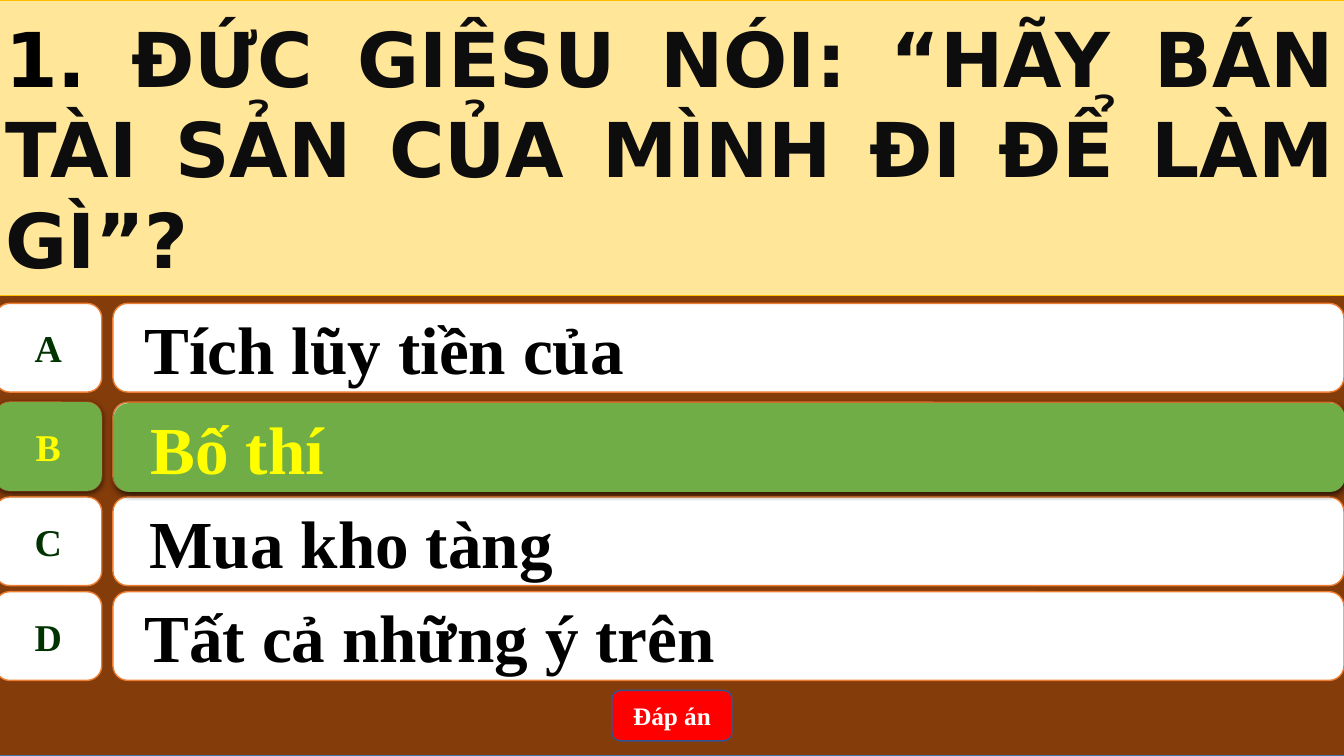
from lxml import etree
from pptx import Presentation
from pptx import util as u
from pptx.dml.color import RGBColor
from pptx.enum import shapes, text

# Content
QUESTION = ("1. ", "ĐỨC GIÊSU NÓI: “HÃY BÁN TÀI SẢN CỦA MÌNH ĐI ĐỂ LÀM GÌ”?")
ANSWERS = [  # letter, answer, row top, text indent
    ("A", "Tích lũy tiền của", 3.01, 0.27),
    ("B", "Bố thí", 3.99, 0.32),
    ("C", "Mua kho tàng", 4.93, 0.32),
    ("D", "Tất cả những ý trên", 5.87, 0.27),
]
CORRECT = 1
BUTTON = "Đáp án"

# Style and grid
COLORS = {
    "brown": "843C0B", "steel": "43739E", "cream": "FFE699", "gold": "FFC000",
    "white": "FFFFFF", "orange": "ED7D31", "forest": "003300", "black": "000000",
    "ink": "0D0D0D", "green": "70AD47", "yellow": "FFFF00", "red": "FF0000",
    "navy": "325491",
}
SERIF, SANS = "Times New Roman", "DejaVu Sans"
PAGE_W, PAGE_H = 13.33, 7.5
LEFT, FULL_W, BANNER_H = -0.05, 13.39, 2.93
LETTER_W, ANSWER_LEFT, ANSWER_W, ROW_H = 1.06, 1.12, 12.21, 0.88
BUTTON_W, BUTTON_H, BUTTON_TOP = 1.19, 0.5, 6.85
KIND = shapes.MSO_SHAPE
ALIGN = text.PP_ALIGN
DRAWING = "http://schemas.openxmlformats.org/drawingml/2006/main"


def color(name):
    return RGBColor.from_string(COLORS[name])


def paint(shape, fill, line=None, width=1):
    shape.fill.solid()
    shape.fill.fore_color.rgb = color(fill)
    if line:
        shape.line.color.rgb = color(line)
        shape.line.width = u.Pt(width)
    else:
        shape.line.fill.background()


def add_box(parent, kind, left, top, width, height, fill, line=None):
    box = parent.shapes.add_shape(kind, *map(u.Inches, (left, top, width, height)))
    box.shadow.inherit = False
    paint(box, fill, line)
    return box


def style_span(span, font, size, ink):
    span.font.name, span.font.size, span.font.bold = font, u.Pt(size), True
    span.font.color.rgb = color(ink)


def write(box, words, size, ink, align, wrap=True):
    frame = box.text_frame
    frame.text = words
    frame.word_wrap = wrap
    frame.vertical_anchor = text.MSO_ANCHOR.MIDDLE
    para = frame.paragraphs[0]
    para.alignment = align
    style_span(para.runs[0], SERIF, size, ink)


def add_shadow(box):
    effects = box.element.spPr.find(f"{{{DRAWING}}}effectLst")
    shadow = etree.SubElement(effects, f"{{{DRAWING}}}outerShdw", blurRad="57150",
                              dist="19050", dir="5400000", algn="ctr", rotWithShape="0")
    shade = etree.SubElement(shadow, f"{{{DRAWING}}}srgbClr", val=COLORS["black"])
    etree.SubElement(shade, f"{{{DRAWING}}}alpha", val="63000")


def add_answer(page, answer, chosen=False):
    letter, words, top, indent = answer
    fill, line = ("green", None) if chosen else ("white", "orange")
    nudge = 0.01 if chosen else 0
    row = page.shapes.add_group_shape()
    bar = add_box(row, KIND.ROUNDED_RECTANGLE, ANSWER_LEFT + nudge, top + nudge,
                  ANSWER_W, ROW_H, fill, line)
    write(bar, words, 48, "yellow" if chosen else "black", ALIGN.LEFT)
    bar.text_frame.margin_left = u.Inches(indent)
    tile = add_box(row, KIND.FLOWCHART_ALTERNATE_PROCESS, LEFT, top,
                   LETTER_W, ROW_H, fill, line)
    write(tile, letter, 27, "yellow" if chosen else "forest", ALIGN.CENTER, wrap=False)
    if chosen:
        add_shadow(bar)
        add_shadow(tile)


def add_question(page):
    banner = page.shapes.title
    banner.left, banner.top = u.Inches(LEFT), 0
    banner.width, banner.height = u.Inches(FULL_W), u.Inches(BANNER_H)
    paint(banner, "cream", "gold", 0.5)
    frame = banner.text_frame
    frame.word_wrap = True
    frame.auto_size = text.MSO_AUTO_SIZE.NONE
    frame.vertical_anchor = text.MSO_ANCHOR.MIDDLE
    para = frame.paragraphs[0]
    para.alignment = ALIGN.JUSTIFY
    for words, ink in zip(QUESTION, ("black", "ink")):
        span = para.add_run()
        span.text = words
        style_span(span, SANS, 54, ink)
    return banner


def main():
    deck = Presentation()
    deck.slide_width, deck.slide_height = u.Inches(PAGE_W), u.Inches(PAGE_H)
    page = deck.slides.add_slide(deck.slide_layouts[5])

    # Backdrop, placed behind the question banner
    banner = add_question(page)
    backdrop = add_box(page, KIND.RECTANGLE, LEFT, 0, FULL_W, PAGE_H, "brown", "steel")
    banner.element.addprevious(backdrop.element)

    # Answers, then the correct one highlighted on top
    for answer in ANSWERS:
        add_answer(page, answer)
    add_answer(page, ANSWERS[CORRECT], chosen=True)

    # Answer button
    button = add_box(page, KIND.ROUNDED_RECTANGLE, (PAGE_W - BUTTON_W) / 2, BUTTON_TOP,
                     BUTTON_W, BUTTON_H, "red", "navy")
    write(button, BUTTON, 18, "white", ALIGN.CENTER)

    deck.save("out.pptx")


if __name__ == "__main__":
    main()
